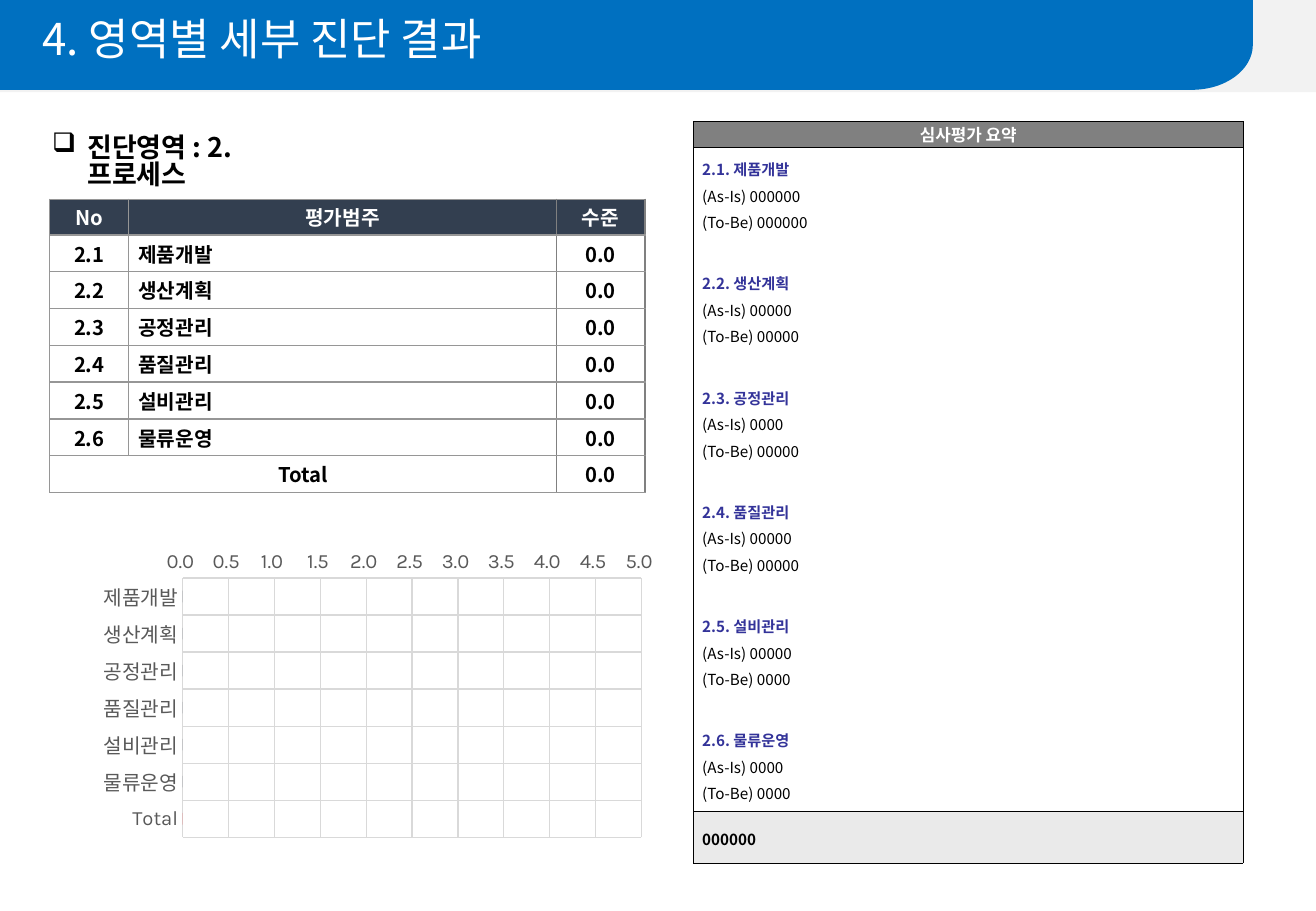
import math
from dataclasses import dataclass

from lxml import etree
from pptx import Presentation
from pptx.chart.data import CategoryChartData
from pptx.dml.color import RGBColor
from pptx.enum.chart import XL_CHART_TYPE, XL_TICK_MARK
from pptx.enum.shapes import MSO_SHAPE
from pptx.enum.text import MSO_ANCHOR, PP_ALIGN
from pptx.oxml.ns import qn
from pptx.util import Cm, Pt

BAR = XL_CHART_TYPE.BAR_CLUSTERED
NO_TICK = XL_TICK_MARK.NONE
RECT = MSO_SHAPE.RECTANGLE
MIDDLE = MSO_ANCHOR.MIDDLE
LEFT, CENTER = PP_ALIGN.LEFT, PP_ALIGN.CENTER

FONT, CHART_FONT = "Noto Sans CJK KR", "Karla"
C = {
    "white": "FFFFFF", "black": "000000", "band": "F2F2F2", "title": "0070C0",
    "navy": "333F50", "red": "FF0000", "axis": "595959", "grid": "D9D9D9",
    "border": "969696", "level_border": "808080", "summary_head": "808080",
    "summary_foot": "EAEAEA", "area": "333399",
}


@dataclass
class Area:
    no: str
    name: str
    as_is: str
    to_be: str
    level: float = 0.0


AREAS = [
    Area("2.1", "제품개발", "000000", "000000"),
    Area("2.2", "생산계획", "00000", "00000"),
    Area("2.3", "공정관리", "0000", "00000"),
    Area("2.4", "품질관리", "00000", "00000"),
    Area("2.5", "설비관리", "00000", "0000"),
    Area("2.6", "물류운영", "0000", "0000"),
]
TOTAL = 0.0


def rgb(name: str) -> RGBColor:
    return RGBColor.from_string(C[name])


def write(tf, text: str, *, size: float, color: str = "black", bold: bool = False,
          align=LEFT, spacing: float = 1.0, before: float = 0):
    """Put text in the empty first paragraph, or in a new one after it."""
    p = tf.paragraphs[0]
    if p.runs:
        p = tf.add_paragraph()
    p.alignment, p.line_spacing, p.space_before = align, spacing, Pt(before)
    r = p.add_run()
    r.text = text
    r.font.size, r.font.bold, r.font.name = Pt(size), bold, FONT
    r.font.color.rgb = rgb(color)
    etree.SubElement(r.font._element, qn("a:ea"), typeface=FONT)
    return p


def paint(sp, color: str) -> None:
    sp.shadow.inherit = False
    sp.fill.solid()
    sp.fill.fore_color.rgb = rgb(color)
    sp.line.fill.background()


def text_box(shapes, left: float, top: float, width: float, height: float,
             margins: tuple[float, float, float, float]):
    tf = shapes.add_textbox(Cm(left), Cm(top), Cm(width), Cm(height)).text_frame
    tf.word_wrap = True
    (tf.margin_left, tf.margin_top,
     tf.margin_right, tf.margin_bottom) = map(Cm, margins)
    return tf


def add_grid(shapes, left: float, top: float, cols: list[float], rows: list[float]):
    """Add a table without style bands."""
    table = shapes.add_table(len(rows), len(cols), Cm(left), Cm(top),
                             Cm(sum(cols)), Cm(sum(rows))).table
    table.first_row = table.horz_banding = False
    for column, width in zip(table.columns, cols):
        column.width = Cm(width)
    for row, height in zip(table.rows, rows):
        row.height = Cm(height)
    return table


def format_cell(cell, fill: str, borders: dict[str, str], width: float,
                margin_x: float, margin_y: float) -> None:
    cell.vertical_anchor = MIDDLE
    cell.margin_left = cell.margin_right = Cm(margin_x)
    cell.margin_top = cell.margin_bottom = Cm(margin_y)
    props = cell._tc.get_or_add_tcPr()
    for side in "LRTB":
        ln = etree.SubElement(props, qn(f"a:ln{side}"), w=str(Pt(width)))
        solid = etree.SubElement(ln, qn("a:solidFill"))
        etree.SubElement(solid, qn("a:srgbClr"), val=C[borders[side]])
    cell.fill.solid()
    cell.fill.fore_color.rgb = rgb(fill)


def add_header(shapes) -> None:
    paint(shapes.add_shape(RECT, 0, 0, Cm(27.51), Cm(1.93)), "band")
    width, height, rx, ry = 26.19, 1.88, 1.27, 0.94
    steps = 24
    angles = [math.pi / 2 * i / steps for i in range(steps + 1)]
    corner = [(Cm(width - rx + rx * math.cos(a)), Cm(height - ry + ry * math.sin(a)))
              for a in angles]
    outline = shapes.build_freeform(0, 0)
    outline.add_line_segments([(Cm(width), 0), *corner, (0, Cm(height))])
    paint(outline.convert_to_shape(), "title")
    tf = text_box(shapes, 0, 0, 27.51, 1.9, (0.89, 0.37, 0, 0))
    write(tf, "4. 영역별 세부 진단 결과", size=26, color="white", spacing=0.9)


def add_heading(shapes) -> None:
    tf = text_box(shapes, 0.84, 2.72, 6.73, 0.94, (0.25, 0.13, 2.23, 0.13))
    p = write(tf, "진단영역 : 2. 프로세스", size=16, bold=True, spacing=0.82)
    props = p._p.get_or_add_pPr()
    props.set("marL", str(Cm(0.74)))
    props.set("indent", str(-Cm(0.74)))
    etree.SubElement(props, qn("a:buChar"), char="❑")


def add_level_table(shapes) -> None:
    lines = [("No", "평가범주", "수준")]
    lines += [(a.no, a.name, f"{a.level:.1f}") for a in AREAS]
    lines.append(("Total", "", f"{TOTAL:.1f}"))
    table = add_grid(shapes, 1.04, 4.17, [1.65, 8.94, 1.85],
                     [0.74] + [0.77] * (len(lines) - 1))
    for i, line in enumerate(lines):
        for j, text in enumerate(line):
            cell = table.cell(i, j)
            borders = dict.fromkeys("LRTB", "border")
            if j == 1:
                borders["R"] = "level_border"
            elif j == 2:
                borders["L"] = borders["R"] = "level_border"
            format_cell(cell, "white" if i else "navy", borders, 1, 0.2, 0.06)
            if text:
                write(cell.text_frame, text, size=12, bold=True,
                      color="black" if i else "white",
                      align=LEFT if i and j == 1 else CENTER)
    last = len(lines) - 1
    table.cell(last, 0).merge(table.cell(last, 1))


def add_level_chart(shapes) -> None:
    data = CategoryChartData(number_format="0.0")
    data.categories = [a.name for a in AREAS] + ["Total"]
    data.add_series("Series 1", [a.level for a in AREAS] + [TOTAL])
    chart = shapes.add_chart(BAR, Cm(0.84), Cm(11.07), Cm(13.08), Cm(6.83), data).chart
    chart.has_legend = chart.has_title = False
    chart.font.size, chart.font.name = Pt(10), CHART_FONT
    chart.font.color.rgb = rgb("black")

    plot = chart.plots[0]
    plot.gap_width, plot.vary_by_categories = 219, False
    series = plot.series[0]
    for fmt, color in ((series.format, "navy"),
                       (series.points[len(AREAS)].format, "red")):
        fmt.fill.solid()
        fmt.fill.fore_color.rgb = rgb(color)

    cat, val = chart.category_axis, chart.value_axis
    for axis in (cat, val):
        axis.major_tick_mark = axis.minor_tick_mark = NO_TICK
        axis.has_major_gridlines = True
        font = axis.tick_labels.font
        font.size, font.name, font.color.rgb = Pt(12), CHART_FONT, rgb("axis")
    for line in (cat.format.line, cat.major_gridlines.format.line,
                 val.major_gridlines.format.line):
        line.width, line.color.rgb = Pt(0.75), rgb("grid")
    cat.reverse_order = True
    val.format.line.fill.background()
    val.minimum_scale, val.maximum_scale, val.major_unit = 0, 5, 0.5
    val.tick_labels.number_format = "0.0_ "
    val.tick_labels.number_format_is_linked = False

    area = plot._element.getparent()
    for old in area.findall(qn("c:layout")):
        area.remove(old)
    layout = etree.Element(qn("c:layout"))
    area.insert(0, layout)
    manual = etree.SubElement(layout, qn("c:manualLayout"))
    for tag, value in (("layoutTarget", "inner"), ("xMode", "edge"), ("yMode", "edge"),
                       ("x", "0.228"), ("y", "0.149"), ("w", "0.733"), ("h", "0.794")):
        etree.SubElement(manual, qn(f"c:{tag}"), val=value)


def add_summary(shapes) -> None:
    table = add_grid(shapes, 14.5, 2.54, [11.48], [0.53, 13.89, 1.09])
    head, body, foot = (table.cell(i, 0) for i in range(3))
    borders = dict.fromkeys("LRTB", "black")
    for cell, fill, margin in ((head, "summary_head", 0), (body, "white", 0.05),
                               (foot, "summary_foot", 0.05)):
        format_cell(cell, fill, borders, 0.28, 0.18, margin)
    write(head.text_frame, "심사평가 요약", size=10, color="white", bold=True, align=CENTER)
    for i, a in enumerate(AREAS):
        write(body.text_frame, f"{a.no}. {a.name}", size=9, color="area", bold=True,
              spacing=1.2, before=20.7 if i else 0)
        for text in (f"(As-Is) {a.as_is}", f"(To-Be) {a.to_be}"):
            write(body.text_frame, text, size=9, spacing=1.2)
    write(foot.text_frame, "000000", size=9, bold=True, spacing=1.2)


def main() -> None:
    prs = Presentation()
    prs.slide_width, prs.slide_height = Cm(27.51), Cm(19.05)
    shapes = prs.slides.add_slide(prs.slide_layouts[6]).shapes
    add_header(shapes)
    add_heading(shapes)
    add_level_chart(shapes)
    add_level_table(shapes)
    add_summary(shapes)
    prs.save("out.pptx")


if __name__ == "__main__":
    main()
